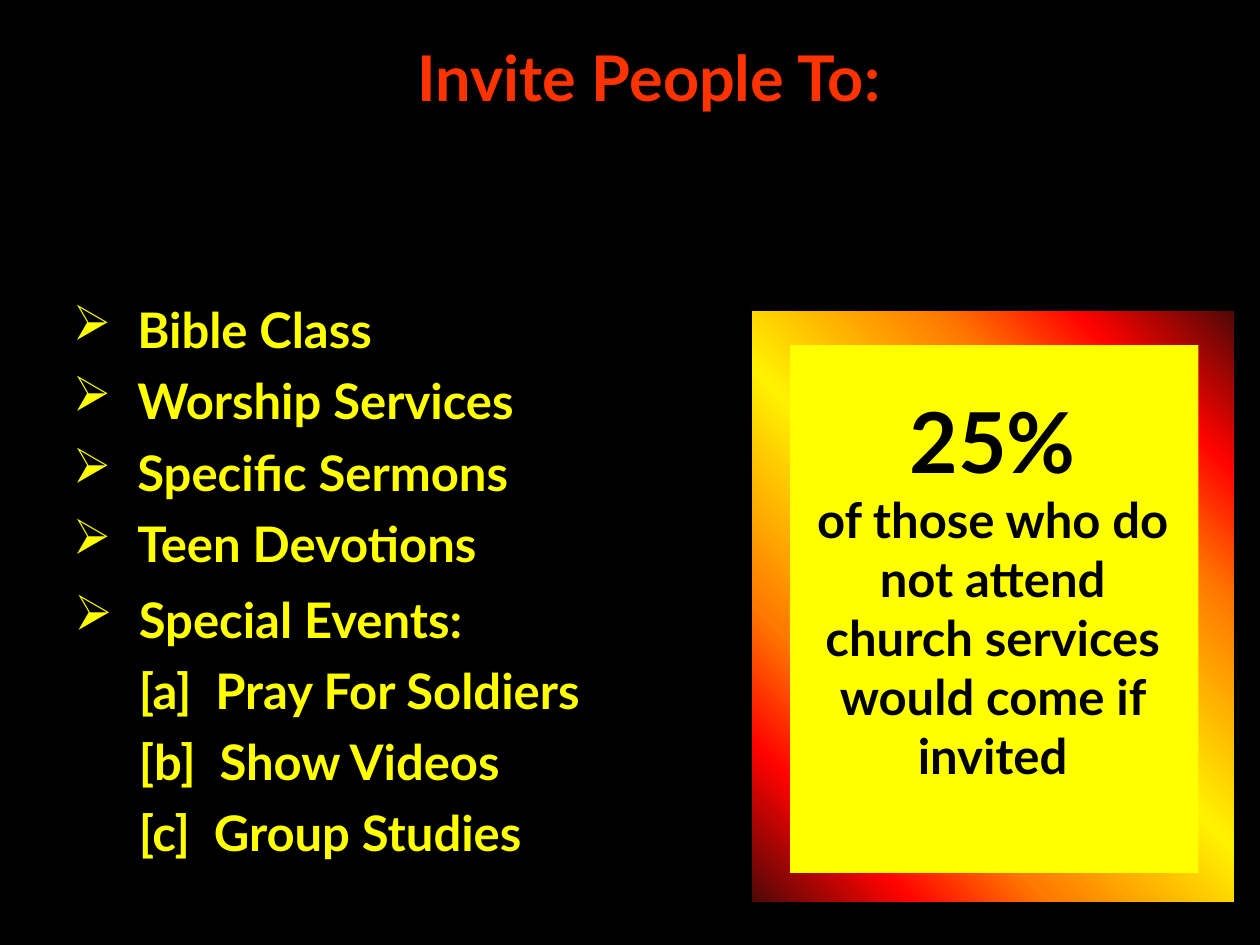
from lxml import etree
from pptx import Presentation
from pptx import util as u
from pptx.dml.color import RGBColor
from pptx.enum import shapes, text
from pptx.oxml import ns

YELLOW, RED, BLACK = "FFFF00", "FF3300", "000000"


def color(value):
    return RGBColor.from_string(value)


def write(para, words, size, value, align=text.PP_ALIGN.LEFT):
    para.text = words
    para.alignment = align
    para.font.name = "Lato"
    para.font.size = u.Pt(size)
    para.font.bold = True
    para.font.color.rgb = color(value)


deck = Presentation()
deck.slide_width, deck.slide_height = u.Cm(25.4), u.Cm(19.05)
page = deck.slides.add_slide(deck.slide_layouts[5])
page.background.fill.solid()
page.background.fill.fore_color.rgb = color(BLACK)

# Title
title = page.shapes.title
title.left, title.top = u.Cm(1.83), u.Cm(0.64)
title.width, title.height = u.Cm(22.5), u.Cm(4.85)
title.text_frame.vertical_anchor = text.MSO_ANCHOR.TOP
title.text_frame.auto_size = text.MSO_AUTO_SIZE.NONE
write(title.text_frame.paragraphs[0], "Invite People To:", 36, RED,
      text.PP_ALIGN.CENTER)

# Two lists: plain entries, then special events with lettered sub-entries
lists = [
    (1.22, 5.92, ["Bible Class", "Worship Services", "Specific Sermons",
                  "Teen Devotions"]),
    (1.25, 11.76, ["Special Events:", "[a]  Pray For Soldiers",
                   "[b]  Show Videos", "[c]  Group Studies"]),
]
indent = u.Cm(1.3)
for left, top, entries in lists:
    box = page.shapes.add_textbox(u.Cm(left), u.Cm(top), u.Cm(13.1), u.Cm(5.89))
    box.text_frame.word_wrap = True
    for number, entry in enumerate(entries):
        para = box.text_frame.paragraphs[0] if number == 0 else box.text_frame.add_paragraph()
        write(para, entry, 28, YELLOW)
        para.space_after = u.Pt(7)
        props = para._p.get_or_add_pPr()
        props.set("marL", str(indent))
        if entry.startswith("["):
            props.set("indent", "0")
            continue
        props.set("indent", str(-indent))
        defaults = props.find(ns.qn("a:defRPr"))
        tint = etree.Element(ns.qn("a:buClr"))
        etree.SubElement(tint, ns.qn("a:srgbClr"), val=YELLOW)
        bullet = etree.Element(ns.qn("a:buChar"), char="➢")
        defaults.addprevious(tint)
        defaults.addprevious(bullet)

# Card: gradient frame, yellow panel and statement
card = page.shapes.add_group_shape().shapes
frame = card.add_shape(shapes.MSO_SHAPE.RECTANGLE,
                       u.Cm(15.14), u.Cm(6.25), u.Cm(9.75), u.Cm(11.94))
frame.shadow.inherit = False
frame.line.color.rgb = color(BLACK)
frame.line.width = u.Pt(0.75)
frame.fill.gradient()
frame.fill.gradient_angle = 45
stops = frame._element.spPr.find(".//" + ns.qn("a:gsLst"))
for stop in list(stops):
    stops.remove(stop)
for percent, value in [(0, "4D0808"), (15, "FF0300"), (28, "FF7A00"),
                       (50, "FFF200"), (72, "FF7A00"), (85, "FF0300"),
                       (100, "4D0808")]:
    stop = etree.SubElement(stops, ns.qn("a:gs"), pos=str(percent * 1000))
    etree.SubElement(stop, ns.qn("a:srgbClr"), val=value)

panel = card.add_shape(shapes.MSO_SHAPE.RECTANGLE,
                       u.Cm(15.93), u.Cm(6.96), u.Cm(8.23), u.Cm(10.64))
panel.shadow.inherit = False
panel.fill.solid()
panel.fill.fore_color.rgb = color(YELLOW)
panel.line.fill.background()

statement = card.add_textbox(u.Cm(16.1), u.Cm(7.72), u.Cm(7.82), u.Cm(9.4)).text_frame
statement.word_wrap = True
write(statement.paragraphs[0], "25%", 48, BLACK, text.PP_ALIGN.CENTER)
write(statement.add_paragraph(),
      "of those who do not attend church services would come if invited",
      28, BLACK, text.PP_ALIGN.CENTER)

deck.save("out.pptx")
